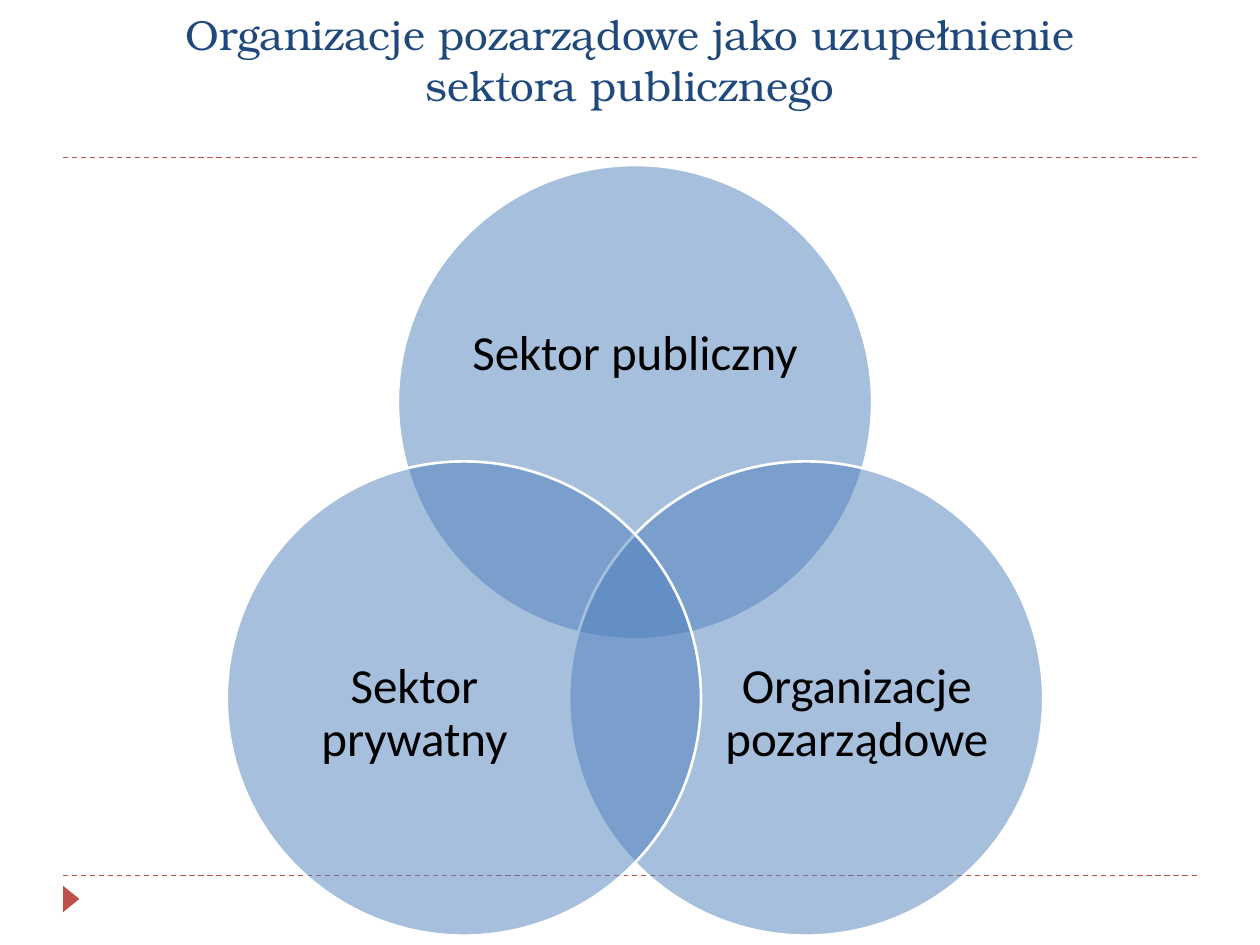
from math import cos, radians, sin

from lxml import etree
from pptx import Presentation
from pptx.dml.color import RGBColor
from pptx.enum.dml import MSO_LINE
from pptx.enum.shapes import MSO_CONNECTOR, MSO_SHAPE
from pptx.enum.text import MSO_ANCHOR, MSO_AUTO_SIZE, PP_ALIGN
from pptx.oxml.ns import qn
from pptx.util import Inches, Pt

DASH = MSO_LINE.DASH
STRAIGHT = MSO_CONNECTOR.STRAIGHT
OVAL = MSO_SHAPE.OVAL
WEDGE = MSO_SHAPE.ISOSCELES_TRIANGLE
MIDDLE = MSO_ANCHOR.MIDDLE
BOTTOM = MSO_ANCHOR.BOTTOM
CENTER = PP_ALIGN.CENTER

RED = RGBColor(0xC0, 0x50, 0x4D)
BLUE = RGBColor(0x4F, 0x81, 0xBD)
NAVY = RGBColor(0x1F, 0x49, 0x7D)
WHITE = RGBColor(0xFF, 0xFF, 0xFF)
BLACK = RGBColor(0, 0, 0)

TITLE = ("Organizacje pozarządowe jako uzupełnienie", "sektora publicznego")
SECTORS = (
    ("Sektor publiczny", -90, (3.66, 1.97, 2.76, 1.69)),
    ("Organizacje pozarządowe", 30, (5.67, 4.63, 2.26, 2.07)),
    ("Sektor prywatny", 150, (2.16, 4.63, 2.26, 2.07)),
)


def inch(*box):
    return [Inches(n) for n in box]


def add_run(para, text, font, size, color):
    run = para.add_run()
    run.text = text
    run.font.name = font
    run.font.size = Pt(size)
    run.font.color.rgb = color


def add_frame(slide, left, right, rules):
    for y in rules:
        rule = slide.shapes.add_connector(STRAIGHT, *inch(left, y, right, y))
        rule.line.color.rgb = RED
        rule.line.width = Pt(0.75)
        rule.line.dash_style = DASH
        etree.SubElement(rule._element.spPr, qn("a:effectLst"))


def add_marker(slide, box):
    mark = slide.shapes.add_shape(WEDGE, *inch(*box))
    mark.rotation = 90
    mark.shadow.inherit = False
    mark.fill.solid()
    mark.fill.fore_color.rgb = RED
    mark.line.fill.background()


def add_title(slide, box):
    title = slide.shapes.title
    title.left, title.top, title.width, title.height = inch(*box)
    frame = title.text_frame
    frame.auto_size = MSO_AUTO_SIZE.NONE
    frame.vertical_anchor = BOTTOM
    para = frame.paragraphs[0]
    para.alignment = CENTER
    for i, line in enumerate(TITLE):
        if i:
            para.add_line_break()
        add_run(para, line, "TeX Gyre Bonum", 24, NAVY)


def add_circle(group, box):
    disc = group.shapes.add_shape(OVAL, *inch(*box))
    disc.shadow.inherit = False
    disc.fill.solid()
    disc.fill.fore_color.rgb = BLUE
    tint = disc._element.spPr.find(qn("a:solidFill"))[0]
    etree.SubElement(tint, qn("a:alpha"), val="50000")
    disc.line.color.rgb = WHITE
    disc.line.width = Pt(1.5)


def add_label(group, text, box):
    frame = group.shapes.add_textbox(*inch(*box)).text_frame
    frame.word_wrap = True
    frame.vertical_anchor = MIDDLE
    frame.margin_left = frame.margin_right = 0
    frame.margin_top = frame.margin_bottom = 0
    para = frame.paragraphs[0]
    para.alignment = CENTER
    para.line_spacing = 0.9
    add_run(para, text, "Calibri", 28, BLACK)


def add_venn(slide, box):
    left, top, width, height = box
    reach = width / 2 / (cos(radians(30)) + 1.2)
    size = 2.4 * reach
    mid = left + width / 2
    hub = top + size / 2 + reach
    group = slide.shapes.add_group_shape()
    for text, angle, area in SECTORS:
        x = mid + reach * cos(radians(angle)) - size / 2
        y = hub + reach * sin(radians(angle)) - size / 2
        add_circle(group, (x, y, size, size))
        add_label(group, text, area)


def main():
    deck = Presentation()
    deck.slide_width, deck.slide_height = inch(10, 7.5)
    slide = deck.slides.add_slide(deck.slide_layouts[5])
    add_frame(slide, 0.5, 9.5, (6.95, 1.25))
    add_marker(slide, (0.46, 7.07, 0.21, 0.13))
    add_title(slide, (0, 0.17, 10, 0.75))
    add_venn(slide, (1.8, 1.31, 6.48, 6.11))
    deck.save("out.pptx")


if __name__ == "__main__":
    main()
